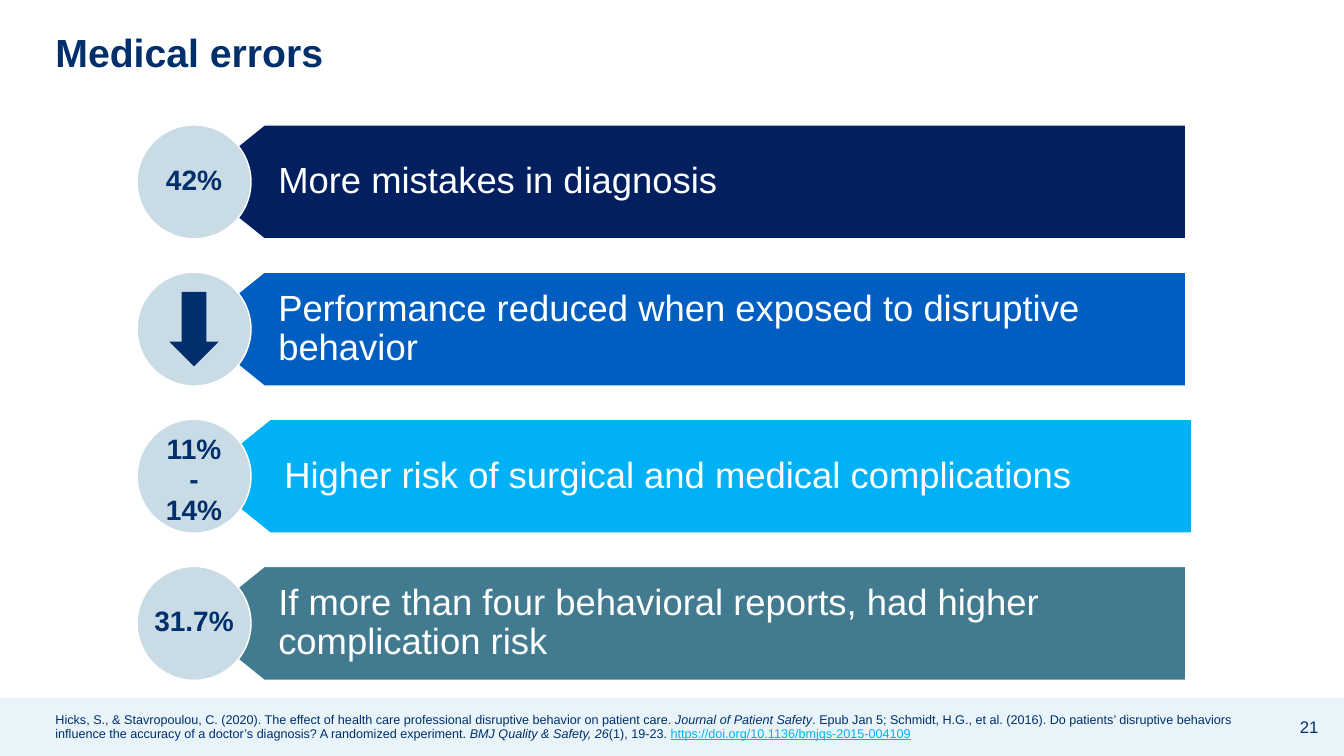
from dataclasses import dataclass

from lxml.etree import SubElement
from pptx import Presentation
from pptx.dml.color import RGBColor
from pptx.enum.shapes import MSO_SHAPE
from pptx.enum.text import MSO_ANCHOR, MSO_AUTO_SIZE, PP_ALIGN
from pptx.oxml.ns import qn
from pptx.util import Inches, Pt

COLORS = {
    "white": "FFFFFF",
    "ink": "002F6B",
    "navy": "02205F",
    "blue": "005EC0",
    "sky": "00B2F5",
    "teal": "427B8F",
    "mist": "C9DCE6",
    "foot": "E8F4FA",
}
FONT = "Arial"
TOP, STEP, SIZE = 1.24, 1.46, 1.13
LEFT, WIDTH, POINT = 1.92, 9.84, 0.7
DISC = 1.36


@dataclass
class Row:
    text: str
    color: str
    badge: tuple[str, ...] = ()
    shift: float = 0
    drop: float = 0.36


@dataclass
class Part:
    text: str
    color: str = "ink"
    bold: bool = False
    slant: bool = False
    line: bool = False


ROWS = [
    Row("More mistakes in diagnosis", "navy", ("42%",)),
    Row("Performance reduced when exposed to disruptive behavior", "blue"),
    Row("Higher risk of surgical and medical complications", "sky",
        ("11%", "-", "14%"), shift=0.06, drop=0.11),
    Row("If more than four behavioral reports, had higher complication risk",
        "teal", ("31.7%",)),
]
SOURCE = [
    Part("Hicks, S., & Stavropoulou, C. (2020). The effect of health care "
         "professional disruptive behavior on patient care. "),
    Part("Journal of Patient Safety", slant=True),
    Part(". Epub Jan 5; Schmidt, H.G., et al. (2016). Do patients’ disruptive "
         "behaviors influence the accuracy of a doctor’s diagnosis? "
         "A randomized experiment. "),
    Part("BMJ Quality & Safety, 26", slant=True),
    Part("(1), 19-23. "),
    Part("https://doi.org/10.1136/bmjqs-2015-004109", "sky", line=True),
]


def tint(name: str) -> RGBColor:
    return RGBColor.from_string(COLORS[name])


def paint(shape, fill: str, edge: str | None = None) -> None:
    shape.shadow.inherit = False
    shape.fill.solid()
    shape.fill.fore_color.rgb = tint(fill)
    if edge:
        shape.line.color.rgb = tint(edge)
        shape.line.width = Pt(1)
    else:
        shape.line.fill.background()


def place(shape, left: float, top: float, width: float, height: float) -> None:
    shape.left, shape.top = Inches(left), Inches(top)
    shape.width, shape.height = Inches(width), Inches(height)


def add_run(para, part: Part, size: float) -> None:
    run = para.add_run()
    run.text = part.text
    font = run.font
    font.name, font.size, font.color.rgb = FONT, Pt(size), tint(part.color)
    font.bold, font.italic, font.underline = part.bold, part.slant, part.line


def write(shape, parts: list[Part], size: float, align=PP_ALIGN.LEFT,
          anchor=MSO_ANCHOR.MIDDLE, wrap: bool = True,
          split: bool = False) -> None:
    """Fill the shape's first paragraph; split puts each part on its own line."""
    frame = shape.text_frame
    frame.word_wrap = wrap
    frame.auto_size = MSO_AUTO_SIZE.NONE
    frame.vertical_anchor = anchor
    para = frame.paragraphs[0]
    para.alignment, para.line_spacing = align, 0.9
    para.space_before = Pt(0)
    for i, part in enumerate(parts):
        if split and i:
            para.add_line_break()
        add_run(para, part, size)


def add_bar(slide, row: Row, top: float) -> None:
    left = LEFT + row.shift
    right, low = left + WIDTH, top + SIZE
    spots = [(right, low), (left + POINT, low), (left, top + SIZE / 2),
             (left + POINT, top), (right, top)]
    spots = [(Inches(x), Inches(y)) for x, y in spots]
    build = slide.shapes.build_freeform(*spots[0])
    build.add_line_segments(spots[1:], close=True)
    bar = build.convert_to_shape()
    paint(bar, row.color, "white")
    frame = bar.text_frame
    frame.margin_left, frame.margin_right = Inches(0.84), Inches(0.25)
    frame.margin_top = frame.margin_bottom = Inches(0.13)
    write(bar, [Part(row.text, "white")], 26)


def add_shape(slide, kind, box: tuple[float, ...], fill: str,
              edge: str | None = None):
    shape = slide.shapes.add_shape(kind, *map(Inches, box))
    paint(shape, fill, edge)
    return shape


def add_badge(slide, row: Row, top: float) -> None:
    add_shape(slide, MSO_SHAPE.OVAL, (DISC, top, SIZE, SIZE), "mist", "white")
    if not row.badge:
        wide, high = 0.49, 0.74
        add_shape(slide, MSO_SHAPE.DOWN_ARROW,
                  (DISC + (SIZE - wide) / 2, top + (SIZE - high) / 2,
                   wide, high), "ink")
        return
    high = 0.1 + 0.3 * len(row.badge)
    box = slide.shapes.add_textbox(*map(Inches, (DISC, top + row.drop,
                                                 SIZE, high)))
    write(box, [Part(t, bold=True) for t in row.badge], 20, PP_ALIGN.CENTER,
          MSO_ANCHOR.TOP, wrap=False, split=True)


def add_source(body) -> None:
    place(body, 0.45, 7.09, 12.1, 0.25)
    props = body.text_frame.paragraphs[0]._p.get_or_add_pPr()
    props.set("marL", "0")
    props.set("indent", "0")
    SubElement(props, qn("a:buNone"))
    write(body, SOURCE, 9)


def main() -> None:
    deck = Presentation()
    deck.slide_width, deck.slide_height = Inches(13.33), Inches(7.5)
    slide = deck.slides.add_slide(deck.slide_layouts[1])

    band = add_shape(slide, MSO_SHAPE.RECTANGLE, (0, 6.92, 13.33, 0.58), "foot")
    band.element.getparent().insert(2, band.element)

    title = slide.shapes.title
    place(title, 0.45, 0.15, 12.09, 0.78)
    write(title, [Part("Medical errors", bold=True)], 28)
    add_source(slide.placeholders[1])

    for i, row in enumerate(ROWS):
        top = TOP + i * STEP
        add_bar(slide, row, top)
        add_badge(slide, row, top)

    page = slide.shapes.add_textbox(*map(Inches, (12.68, 7.02, 0.61, 0.4)))
    write(page, [Part("21")], 12, PP_ALIGN.CENTER)
    deck.save("out.pptx")


if __name__ == "__main__":
    main()
